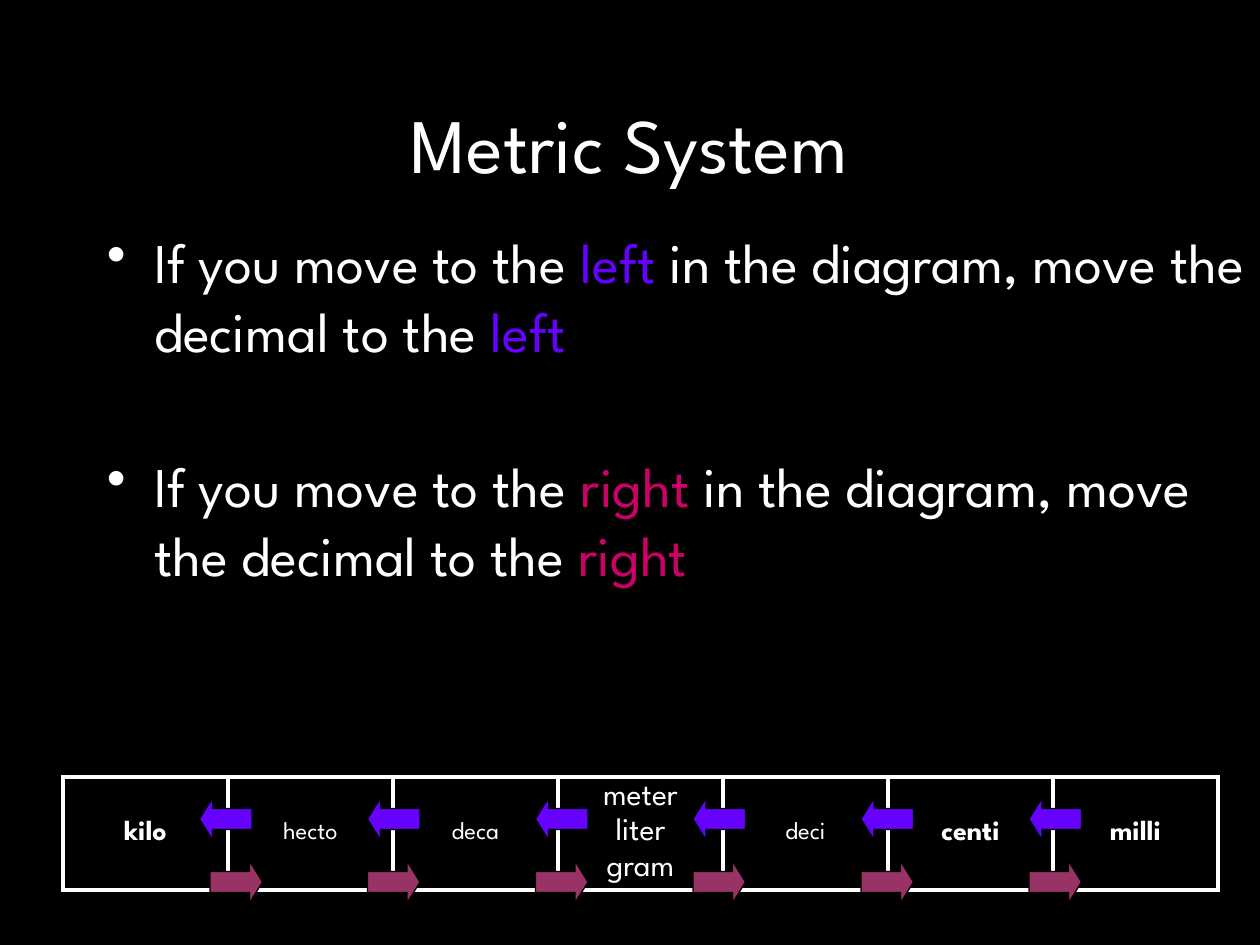
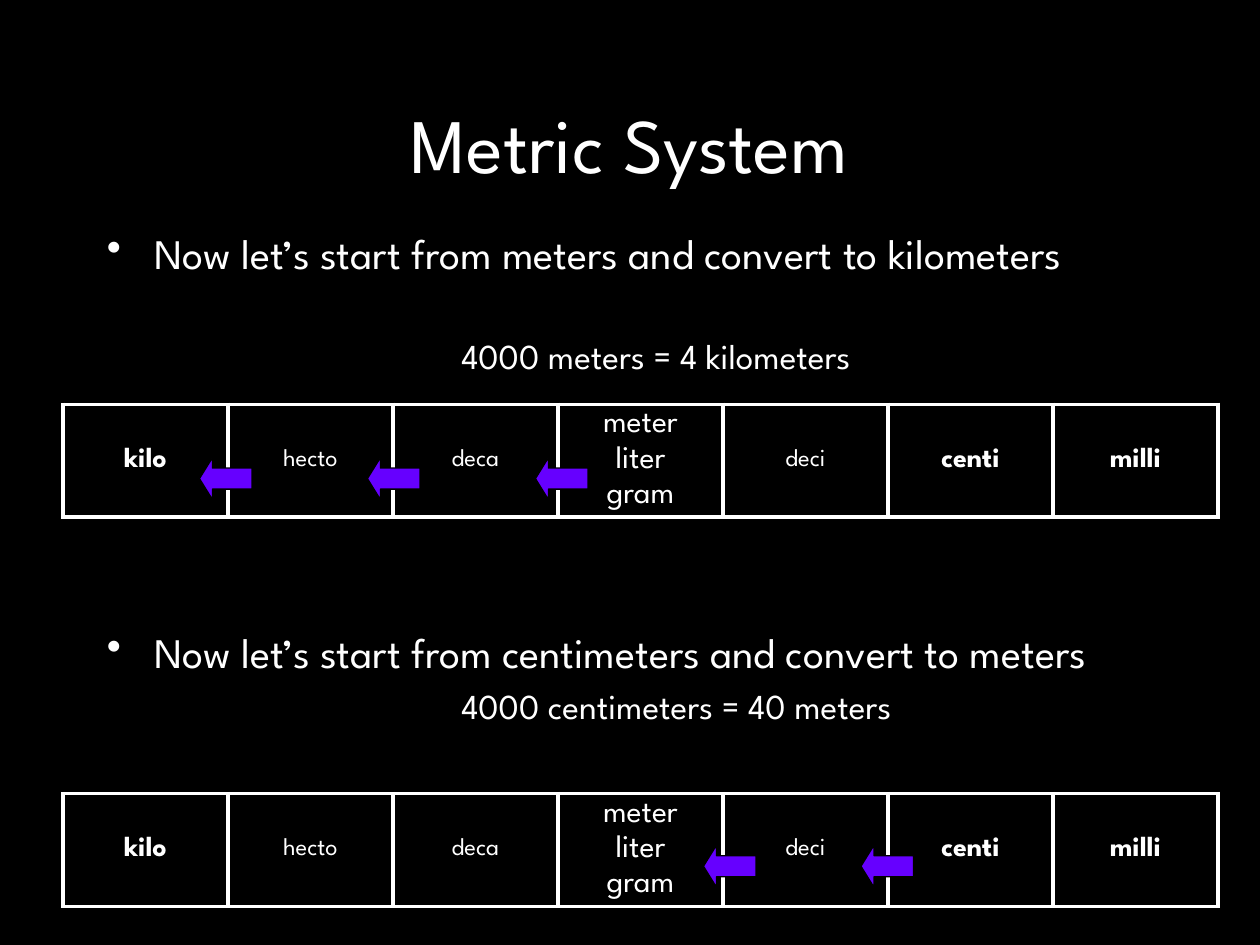
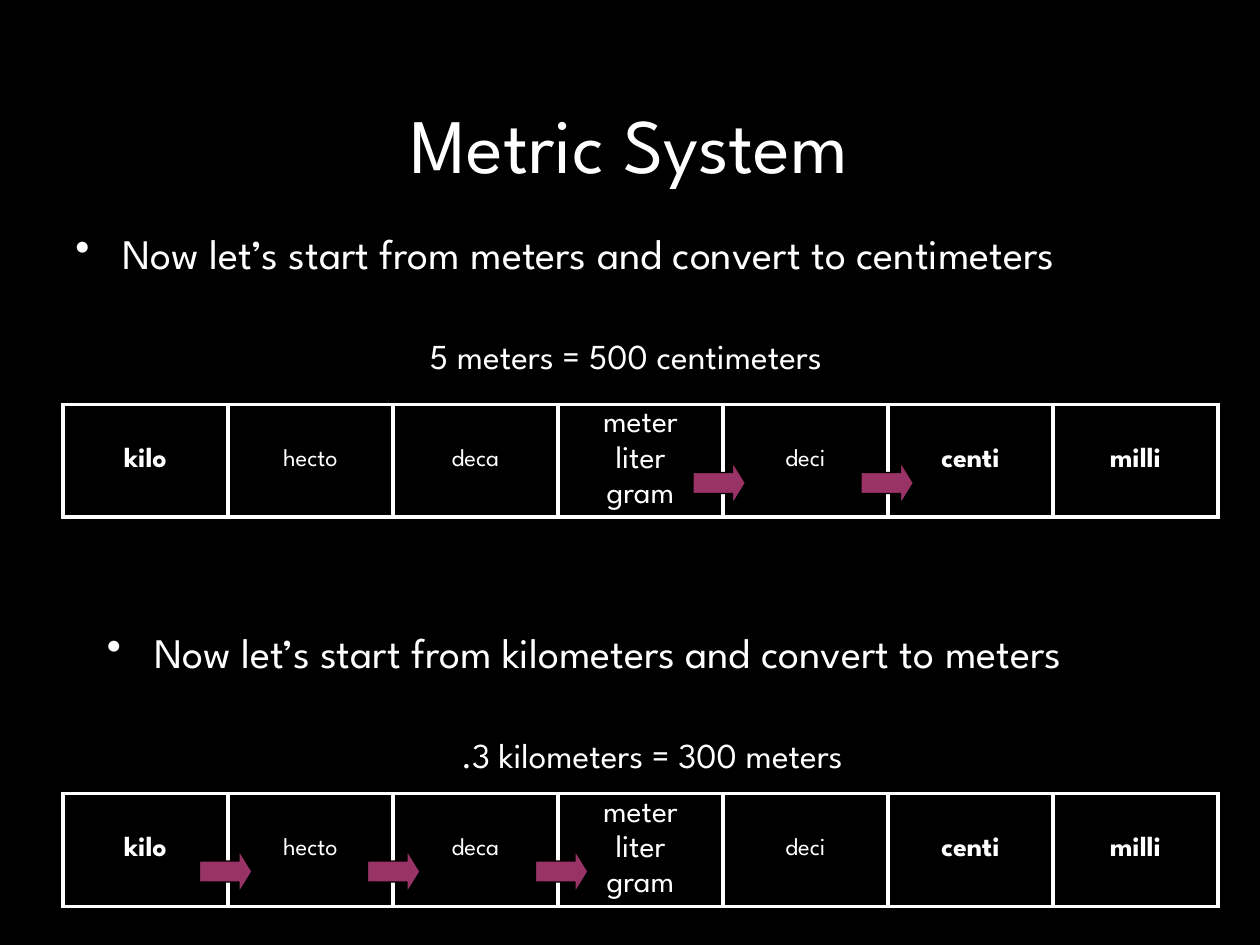
from pptx import Presentation
from pptx.dml.color import RGBColor
from pptx.enum.shapes import MSO_SHAPE
from pptx.enum.text import MSO_ANCHOR, PP_ALIGN
from pptx.oxml.xmlchemy import OxmlElement
from pptx.util import Pt

FONT = "League Spartan"
BLACK = RGBColor(0x00, 0x00, 0x00)
WHITE = RGBColor(0xFF, 0xFF, 0xFF)
VIOLET = RGBColor(0x66, 0x00, 0xFF)
PINK = RGBColor(0xCC, 0x00, 0x66)
PLUM = RGBColor(0x99, 0x33, 0x66)

TITLE = "Metric System"
# Prefix lines, size, bold
PREFIXES = [
    (["kilo"], 16, True),
    (["hecto"], 14, False),
    (["deca"], 14, False),
    (["meter", "liter", "gram"], 18, False),
    (["deci"], 14, False),
    (["centi"], 16, True),
    (["milli"], 16, True),
]

RULES = [("left", VIOLET), ("right", PINK)]
RULE_SLIDE = {
    "scale_top": 444,
    "arrows": [
        ("left", 456, [114, 210, 306, 396, 492, 588]),
        ("right", 492, [120, 210, 306, 396, 492, 588]),
    ],
}

UPPER_SCALE, LOWER_SCALE = 231, 453.5
UPPER_TEXT, LOWER_TEXT = (126, 126), (354, 96)  # top, height
WIDE_GAP, NARROW_GAP = 32, 4
EXAMPLE_SLIDES = [
    [
        {"task": "Now let’s start from meters and convert to kilometers",
         "answer": "4000 meters = 4 kilometers", "gap": WIDE_GAP,
         "text_left": 54, "text_band": UPPER_TEXT, "scale_top": UPPER_SCALE,
         "arrows": ("left", 261.5, [114, 210, 306])},
        {"task": "Now let’s start from centimeters and convert to meters",
         "answer": "4000 centimeters = 40 meters", "gap": NARROW_GAP,
         "text_left": 54, "text_band": LOWER_TEXT, "scale_top": LOWER_SCALE,
         "arrows": ("left", 483, [402, 492])},
    ],
    [
        {"task": "Now let’s start from meters and convert to centimeters",
         "answer": "5 meters = 500 centimeters", "gap": WIDE_GAP,
         "text_left": 36, "text_band": UPPER_TEXT, "scale_top": UPPER_SCALE,
         "arrows": ("right", 264, [396, 492])},
        {"task": "Now let’s start from kilometers and convert to meters",
         "answer": ".3 kilometers = 300 meters", "gap": WIDE_GAP,
         "text_left": 54, "text_band": LOWER_TEXT, "scale_top": LOWER_SCALE,
         "arrows": ("right", 486, [114, 210, 306])},
    ],
]

SLIDE_WIDTH, SLIDE_HEIGHT = 720, 540
SCALE_LEFT, SCALE_WIDTH, SCALE_HEIGHT = 36, 660, 64.5
BULLET_INDENT, ANSWER_INDENT = 27, 202.5
BODY_LEADING, CELL_LEADING = 1.22, 0.92


def write_paragraph(paragraph, parts, size, leading=BODY_LEADING, before=0, bold=False):
    """Fill a paragraph from (text, colour) parts."""
    paragraph.line_spacing = Pt(size * leading)
    paragraph.space_before = Pt(before)
    for text, colour in parts:
        run = paragraph.add_run()
        run.text = text
        run.font.name = FONT
        run.font.size = Pt(size)
        run.font.bold = bold
        run.font.color.rgb = colour


def indent(paragraph, margin, bullet=False):
    properties = paragraph._p.get_or_add_pPr()
    properties.set("marL", str(Pt(margin)))
    if bullet:
        properties.set("indent", str(-Pt(margin)))
        mark = OxmlElement("a:buChar")
        mark.set("char", "•")
        properties.append(mark)


def add_text_frame(slide, left, top, width, height):
    box = slide.shapes.add_textbox(Pt(left), Pt(top), Pt(width), Pt(height))
    box.text_frame.word_wrap = True
    return box.text_frame


def add_titled_slide(presentation):
    slide = presentation.slides.add_slide(presentation.slide_layouts[6])
    slide.background.fill.solid()
    slide.background.fill.fore_color.rgb = BLACK
    frame = add_text_frame(slide, 54, 36, 612, 90)
    frame.vertical_anchor = MSO_ANCHOR.MIDDLE
    frame.paragraphs[0].alignment = PP_ALIGN.CENTER
    write_paragraph(frame.paragraphs[0], [(TITLE, WHITE)], 44)
    return slide


def add_borders(cell):
    properties = cell._tc.get_or_add_tcPr()
    for side in ("a:lnL", "a:lnR", "a:lnT", "a:lnB"):
        line = OxmlElement(side)
        line.set("w", str(Pt(2.25)))
        fill = OxmlElement("a:solidFill")
        colour = OxmlElement("a:srgbClr")
        colour.set("val", str(WHITE))
        fill.append(colour)
        line.append(fill)
        properties.append(line)


def add_prefix_scale(slide, top):
    table = slide.shapes.add_table(1, len(PREFIXES), Pt(SCALE_LEFT), Pt(top),
                                   Pt(SCALE_WIDTH), Pt(SCALE_HEIGHT)).table
    table.first_row = table.horz_banding = False
    for column, (lines, size, bold) in enumerate(PREFIXES):
        table.columns[column].width = Pt(SCALE_WIDTH / len(PREFIXES))
        cell = table.cell(0, column)
        add_borders(cell)
        cell.fill.background()
        cell.vertical_anchor = MSO_ANCHOR.MIDDLE
        cell.text_frame.text = "\n".join(lines)
        for number, paragraph in enumerate(cell.text_frame.paragraphs):
            paragraph.clear()
            paragraph.alignment = PP_ALIGN.CENTER
            write_paragraph(paragraph, [(lines[number], WHITE)], size, CELL_LEADING,
                            before=0.2 * size if number else 0, bold=bold)


def add_arrows(slide, direction, top, lefts):
    for left in lefts:
        arrow = slide.shapes.add_shape(MSO_SHAPE.LEFT_ARROW, Pt(left), Pt(top), Pt(30), Pt(24))
        arrow.adjustments[1] = 0.31
        arrow.shadow.inherit = False
        arrow.fill.solid()
        arrow.fill.fore_color.rgb = VIOLET if direction == "left" else PLUM
        arrow.line.color.rgb = BLACK
        arrow.line.width = Pt(0.75)
        if direction == "right":
            arrow.rotation = 180


def add_rule_slide(presentation):
    slide = add_titled_slide(presentation)
    frame = add_text_frame(slide, 54, 126, 666, 306)
    for number, (word, colour) in enumerate(RULES):
        paragraph = frame.add_paragraph() if number else frame.paragraphs[0]
        parts = [("If you move to the ", WHITE), (word, colour),
                 (" in the diagram, move the decimal to the ", WHITE), (word, colour)]
        write_paragraph(paragraph, parts, 32, before=50 if number else 0)
        indent(paragraph, BULLET_INDENT, bullet=True)
    add_prefix_scale(slide, RULE_SLIDE["scale_top"])
    for arrows in RULE_SLIDE["arrows"]:
        add_arrows(slide, *arrows)


def add_example(slide, example):
    left = example["text_left"]
    top, height = example["text_band"]
    frame = add_text_frame(slide, left, top, SLIDE_WIDTH - left, height)
    task, answer = frame.paragraphs[0], frame.add_paragraph()
    write_paragraph(task, [(example["task"], WHITE)], 24)
    indent(task, BULLET_INDENT, bullet=True)
    write_paragraph(answer, [(example["answer"], WHITE)], 20, before=example["gap"])
    indent(answer, ANSWER_INDENT)
    add_prefix_scale(slide, example["scale_top"])
    add_arrows(slide, *example["arrows"])


def main():
    presentation = Presentation()
    presentation.slide_width = Pt(SLIDE_WIDTH)
    presentation.slide_height = Pt(SLIDE_HEIGHT)
    add_rule_slide(presentation)
    for examples in EXAMPLE_SLIDES:
        slide = add_titled_slide(presentation)
        for example in examples:
            add_example(slide, example)
    presentation.save("out.pptx")


if __name__ == "__main__":
    main()
